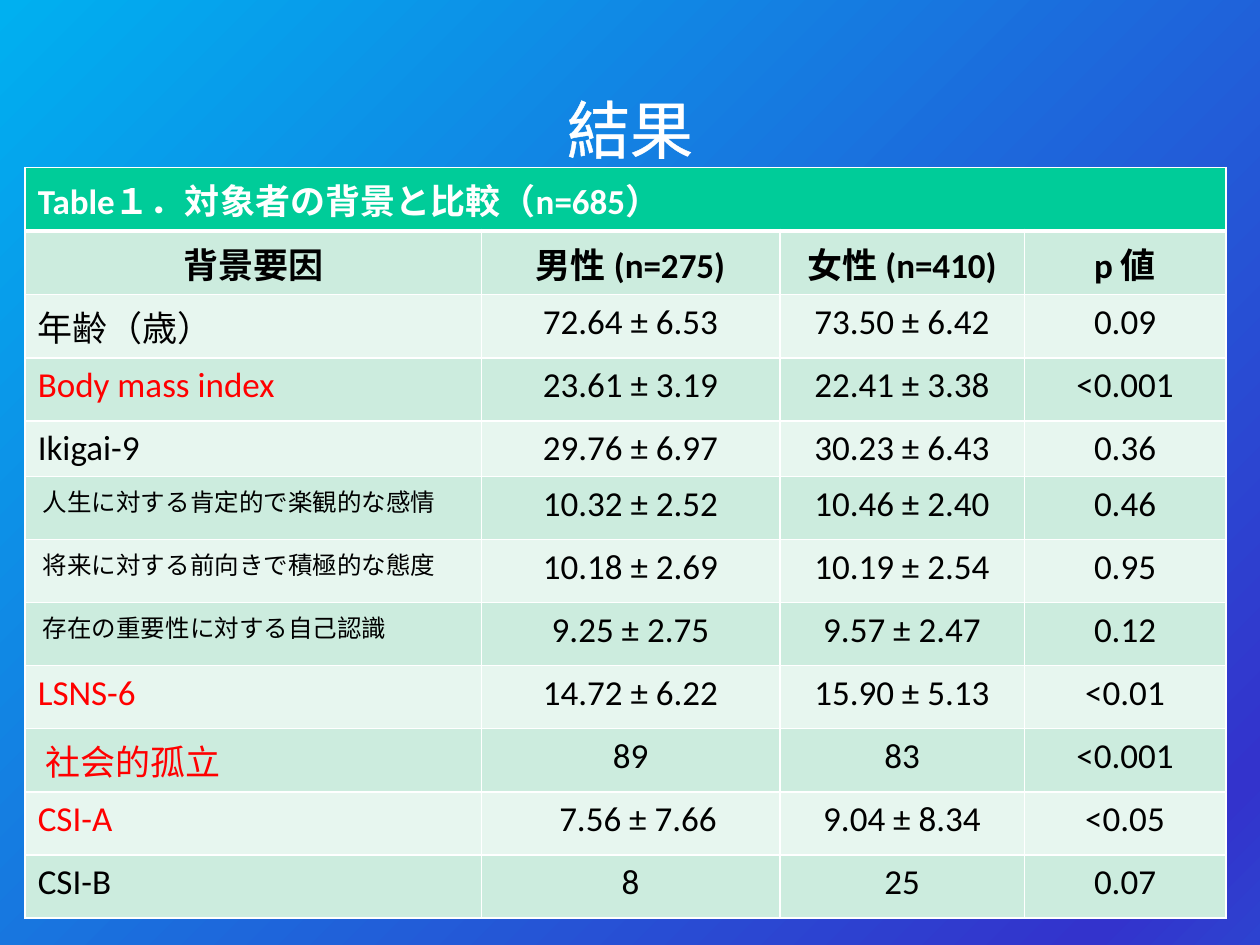
from copy import deepcopy

from lxml import etree
from pptx import Presentation
from pptx.dml.color import RGBColor
from pptx.enum.text import MSO_ANCHOR, PP_ALIGN
from pptx.oxml.ns import qn
from pptx.util import Inches, Pt

CENTER, LEFT = PP_ALIGN.CENTER, PP_ALIGN.LEFT
MIDDLE = MSO_ANCHOR.MIDDLE

WHITE = RGBColor(0xFF, 0xFF, 0xFF)
BLACK = RGBColor(0x00, 0x00, 0x00)
RED = RGBColor(0xFF, 0x00, 0x00)
GREEN = RGBColor(0x00, 0xCC, 0x99)
BANDS = (RGBColor(0xE7, 0xF6, 0xEF), RGBColor(0xCC, 0xEC, 0xDE))
BACKGROUND_STOPS = (
    (0, RGBColor(0x00, 0xB0, 0xF0)),
    (0.92, RGBColor(0x33, 0x33, 0xCC)),
    (1, RGBColor(0x2D, 0x42, 0xD0)),
)

COLUMN_WIDTHS = (3.62, 2.37, 1.94, 1.6)
ROW_HEIGHT = 0.5
SPECIAL_HEIGHTS = {2: 0.48, 4: 0.35}
CELL_MARGIN = 0.1
SIZE, SMALL_SIZE = 20, 14

CAPTION = "Table１．対象者の背景と比較（n=685）"
HEADERS = ("背景要因", "男性 (n=275)", "女性 (n=410)", "p 値")
RESULTS = (
    ("年齢（歳）", "72.64 ± 6.53", "73.50 ± 6.42", "0.09"),
    ("Body mass index", "23.61 ± 3.19", "22.41 ± 3.38", "<0.001"),
    ("Ikigai-9", "29.76 ± 6.97", "30.23 ± 6.43", "0.36"),
    ("人生に対する肯定的で楽観的な感情", "10.32 ± 2.52", "10.46 ± 2.40", "0.46"),
    ("将来に対する前向きで積極的な態度", "10.18 ± 2.69", "10.19 ± 2.54", "0.95"),
    ("存在の重要性に対する自己認識", "9.25 ± 2.75", "9.57 ± 2.47", "0.12"),
    ("LSNS-6", "14.72 ± 6.22", "15.90 ± 5.13", "<0.01"),
    ("社会的孤立", "89", "83", "<0.001"),
    ("CSI-A", "7.56 ± 7.66", "9.04 ± 8.34", "<0.05"),
    ("CSI-B", "8", "25", "0.07"),
)
SIGNIFICANT = {"Body mass index", "LSNS-6", "社会的孤立", "CSI-A"}
SUBSCALES = {row[0] for row in RESULTS[3:6]}
INDENTS = {**dict.fromkeys(SUBSCALES, 0.04), "社会的孤立": 0.06, "7.56 ± 7.66": 0.12}


def paint_background(slide):
    fill = slide.background.fill
    fill.gradient()
    fill.gradient_angle = 315
    stop_list = slide.element.find(".//" + qn("a:gsLst"))
    stop_list.append(deepcopy(stop_list[-1]))
    for stop, (position, color) in zip(fill.gradient_stops, BACKGROUND_STOPS):
        stop.position = position
        stop.color.rgb = color


def white_line(tag, width):
    line = etree.Element(qn(tag), w=str(Pt(width)))
    fill = etree.SubElement(line, qn("a:solidFill"))
    etree.SubElement(fill, qn("a:srgbClr"), val=str(WHITE))
    return line


def add_title(slide, text):
    title = slide.shapes.title
    title.left, title.top = Inches(0.75), Inches(0.67)
    title.width, title.height = Inches(8.5), Inches(1.25)
    frame = title.text_frame
    frame.text = text
    frame.vertical_anchor = MIDDLE
    frame.margin_bottom = Inches(0.6)
    paragraph = frame.paragraphs[0]
    paragraph.alignment = CENTER
    font = paragraph.runs[0].font
    font.size, font.name = Pt(36), "Times New Roman"
    font.color.rgb = WHITE
    paragraph.runs[0].font._element.insert(0, white_line("a:ln", 0.75))


def set_borders(cell, top=1, bottom=1):
    widths = {"a:lnL": 1, "a:lnR": 1, "a:lnT": top, "a:lnB": bottom}
    properties = cell._tc.get_or_add_tcPr()
    for index, (tag, width) in enumerate(widths.items()):
        properties.insert(index, white_line(tag, width))


def fill_cell(cell, text, fill, color=BLACK, bold=False, alignment=CENTER):
    cell.text = text
    cell.margin_left = Inches(CELL_MARGIN + INDENTS.get(text, 0))
    cell.fill.solid()
    cell.fill.fore_color.rgb = fill
    paragraph = cell.text_frame.paragraphs[0]
    paragraph.alignment = alignment
    font = paragraph.runs[0].font
    font.size = Pt(SMALL_SIZE if text in SUBSCALES else SIZE)
    font.name, font.bold = "Calibri", bold
    font.color.rgb = color


def add_results_table(slide):
    row_count = len(RESULTS) + 2
    heights = [SPECIAL_HEIGHTS.get(i, ROW_HEIGHT) for i in range(row_count)]
    table = slide.shapes.add_table(
        row_count, len(COLUMN_WIDTHS), Inches(0.2), Inches(1.33),
        Inches(sum(COLUMN_WIDTHS)), Inches(sum(heights)),
    ).table
    for column, width in zip(table.columns, COLUMN_WIDTHS):
        column.width = Inches(width)
    for row, height in zip(table.rows, heights):
        row.height = Inches(height)

    caption = table.cell(0, 0)
    caption.merge(table.cell(0, len(COLUMN_WIDTHS) - 1))
    fill_cell(caption, CAPTION, GREEN, WHITE, bold=True, alignment=LEFT)
    for cell in table.rows[0].cells:
        set_borders(cell, bottom=3)

    for row_index, values in enumerate((HEADERS, *RESULTS), start=1):
        is_header = row_index == 1
        for column_index, text in enumerate(values):
            cell = table.cell(row_index, column_index)
            is_label = column_index == 0 and not is_header
            fill_cell(
                cell, text, BANDS[row_index % 2],
                color=RED if text in SIGNIFICANT else BLACK,
                bold=is_header, alignment=LEFT if is_label else CENTER,
            )
            set_borders(cell, top=3 if is_header else 1)


def main():
    presentation = Presentation()
    presentation.slide_width, presentation.slide_height = Inches(10), Inches(7.5)
    slide = presentation.slides.add_slide(presentation.slide_layouts[5])
    paint_background(slide)
    add_title(slide, "結果")
    add_results_table(slide)
    presentation.save("out.pptx")


if __name__ == "__main__":
    main()
